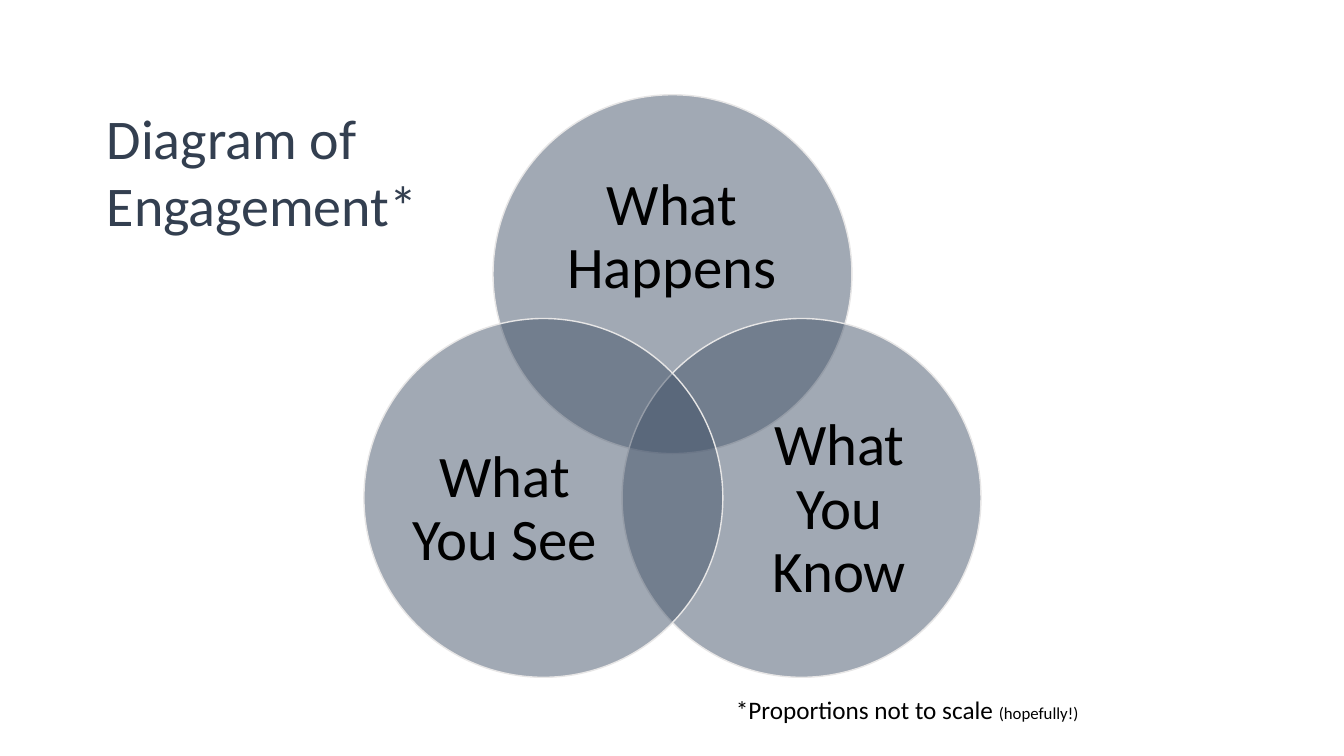
from lxml.etree import SubElement
from pptx import Presentation
from pptx.dml.color import RGBColor
from pptx.enum.shapes import MSO_SHAPE
from pptx.enum.text import MSO_ANCHOR, MSO_AUTO_SIZE, PP_ALIGN
from pptx.oxml.ns import qn
from pptx.util import Inches, Pt

DIAMETER = 3.56

# label, circle offset (left, top), label offset (left, top), label size
CIRCLES = [
    ("What Happens", (1.28, 0), (1.75, 0.62), (2.61, 1.6)),
    ("What You Know", (2.56, 2.22), (3.65, 3.14), (2.13, 1.96)),
    ("What You See", (0, 2.22), (0.33, 3.14), (2.13, 1.96)),
]


def color(hex_code):
    return RGBColor.from_string(hex_code)


def set_font(font, size, hex_code):
    font.name = "Calibri"
    font.size = Pt(size)
    font.color.rgb = color(hex_code)


def add_text(shapes, left, top, width, height, size, hex_code, *texts):
    """Add a one-paragraph text box with one run per text."""
    box = shapes.add_textbox(Inches(left), Inches(top), Inches(width), Inches(height))
    box.text_frame.word_wrap = True
    para = box.text_frame.paragraphs[0]
    set_font(para.font, size, hex_code)
    for text in texts:
        para.add_run().text = text
    return box.text_frame


def add_circle(shapes, left, top):
    circle = shapes.add_shape(MSO_SHAPE.OVAL, Inches(left), Inches(top),
                              Inches(DIAMETER), Inches(DIAMETER))
    circle.shadow.inherit = False
    circle.fill.solid()
    circle.fill.fore_color.rgb = color("44546A")
    fill = circle.fill._xPr.find(qn("a:solidFill"))
    SubElement(fill[0], qn("a:alpha"), val="50000")
    circle.line.color.rgb = color("E7E6E6")
    circle.line.width = Pt(1)


def add_venn(page, left, top):
    shapes = page.shapes.add_group_shape().shapes
    for label, (circle_x, circle_y), (label_x, label_y), (width, height) in CIRCLES:
        add_circle(shapes, left + circle_x, top + circle_y)
        frame = add_text(shapes, left + label_x, top + label_y, width, height,
                         42, "000000", label)
        frame.margin_left = frame.margin_right = 0
        frame.margin_top = frame.margin_bottom = 0
        frame.vertical_anchor = MSO_ANCHOR.MIDDLE
        para = frame.paragraphs[0]
        para.alignment = PP_ALIGN.CENTER
        para.line_spacing = 0.9


def add_footnote(page, left, top, width, height):
    frame = add_text(page.shapes, left, top, width, height, 18, "000000",
                     "*Proportions not to scale ", "(hopefully!)")
    frame.auto_size = MSO_AUTO_SIZE.SHAPE_TO_FIT_TEXT
    frame.paragraphs[0].runs[1].font.size = Pt(12)


def add_title(page, left, top, width, height):
    frame = add_text(page.shapes, left, top, width, height, 40, "333F50",
                     "Diagram of Engagement*")
    frame.auto_size = MSO_AUTO_SIZE.SHAPE_TO_FIT_TEXT
    span = frame.paragraphs[0].runs[0]
    outline = SubElement(span.font._element, qn("a:ln"), w=str(Pt(0.75)))
    fill = SubElement(outline, qn("a:solidFill"))
    SubElement(fill, qn("a:srgbClr"), val="222A35")


def main():
    deck = Presentation()
    deck.slide_width, deck.slide_height = Inches(13.33), Inches(7.5)
    page = deck.slides.add_slide(deck.slide_layouts[6])
    add_venn(page, 3.61, 0.94)
    add_footnote(page, 7.2, 6.84, 4.38, 0.4)
    add_title(page, 0.96, 0.98, 4.71, 1.45)
    deck.save("out.pptx")


if __name__ == "__main__":
    main()
